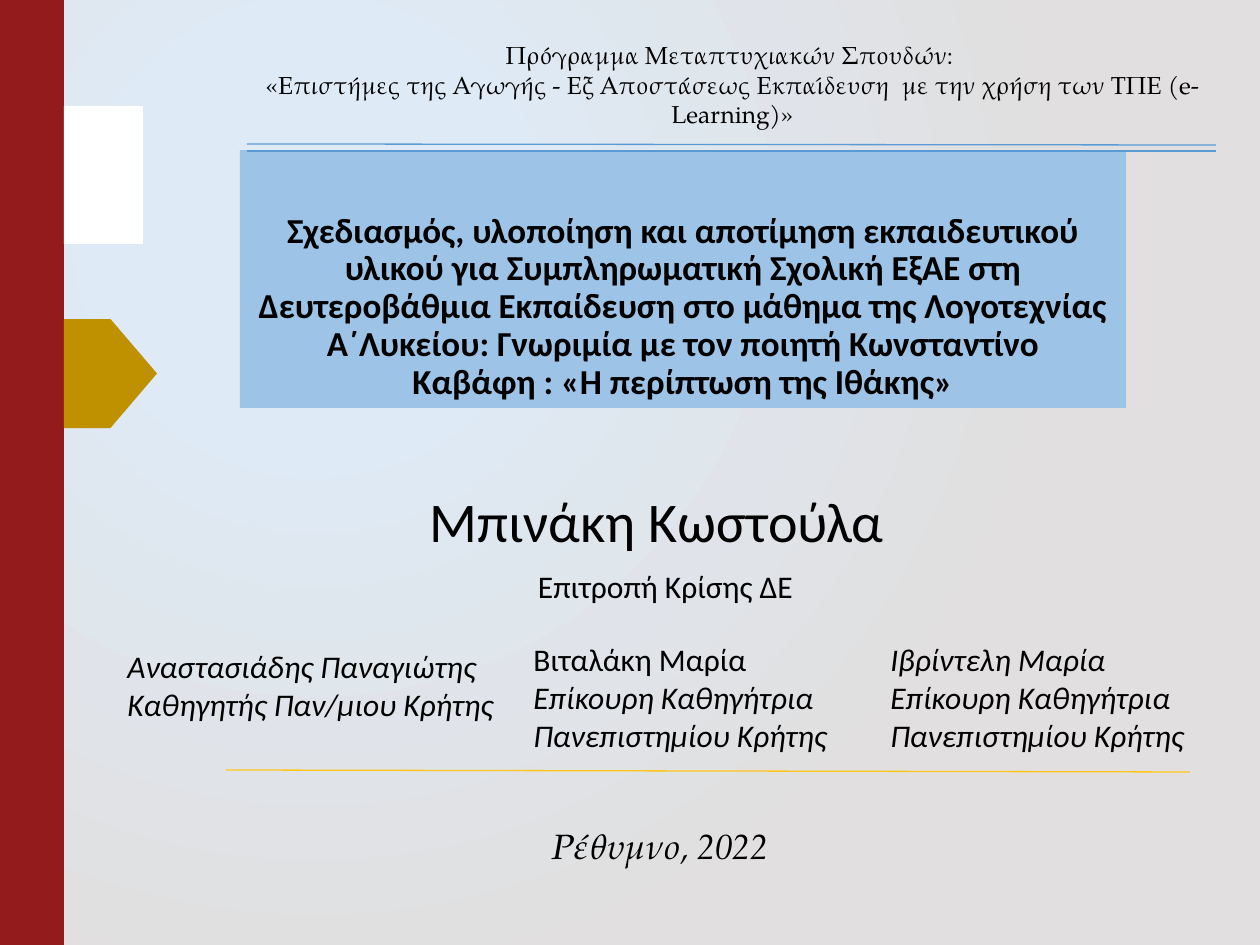
from lxml.etree import SubElement
from pptx import Presentation
from pptx.dml.color import RGBColor
from pptx.enum.shapes import MSO_CONNECTOR, MSO_SHAPE
from pptx.enum.text import MSO_ANCHOR, MSO_AUTO_SIZE, PP_ALIGN
from pptx.oxml.ns import qn
from pptx.util import Emu, Pt

PX_PER_INCH = 126
COLORS = {
    "glow": "DEEBF7", "paper": "E1DFDF", "spine": "931B1B", "tab": "FFFFFF",
    "arrow": "BF9000", "title": "9DC3E6", "header_rule": "5B9BD5",
    "footer_rule": "FFC61A", "ink": "000000",
}
SANS = "Calibri"
SERIF = "TeX Gyre Pagella"


def px(value):
    return Emu(round(value * 914400 / PX_PER_INCH))


def color(name):
    return RGBColor.from_string(COLORS[name])


def paint_background(slide):
    fill = slide.background.fill
    fill.gradient()
    for stop, name, position in zip(fill.gradient_stops, ("glow", "paper"), (0.17, 1)):
        stop.color.rgb = color(name)
        stop.position = position
    gradient = slide.element.find(".//" + qn("a:gradFill"))
    gradient.remove(gradient.find(qn("a:lin")))
    circle = SubElement(gradient, qn("a:path"), path="circle")
    SubElement(circle, qn("a:fillToRect"), l="50000", t="50000", r="100000", b="100000")


def add_block(slide, kind, box, fill):
    block = slide.shapes.add_shape(kind, *map(px, box))
    block.shadow.inherit = False
    block.fill.solid()
    block.fill.fore_color.rgb = color(fill)
    block.line.fill.background()
    return block


def add_rule(slide, start, end, name):
    rule = slide.shapes.add_connector(MSO_CONNECTOR.STRAIGHT, *map(px, start + end))
    rule.line.color.rgb = color(name)
    rule.line.width = Pt(0.75)
    SubElement(rule.element.spPr, qn("a:effectLst"))


def write(frame, lines, size, font, align=PP_ALIGN.CENTER, bold=False, spacing=None):
    frame.word_wrap = True
    for index, (words, italic) in enumerate(lines):
        paragraph = frame.paragraphs[0] if index == 0 else frame.add_paragraph()
        paragraph.alignment = align
        paragraph.line_spacing = spacing
        run = paragraph.add_run()
        run.text = words
        run.font.size = Pt(size)
        run.font.name = font
        run.font.bold = bold
        run.font.italic = italic
        run.font.color.rgb = color("ink")


def add_text(slide, box, lines, size, font, align=PP_ALIGN.CENTER, anchor=MSO_ANCHOR.TOP):
    frame = slide.shapes.add_textbox(*map(px, box)).text_frame
    write(frame, lines, size, font, align)
    frame.auto_size = MSO_AUTO_SIZE.SHAPE_TO_FIT_TEXT
    frame.vertical_anchor = anchor


def add_side_band(slide, box):
    left, top, width, height = box
    add_block(slide, MSO_SHAPE.RECTANGLE, box, "spine")
    edge = left + width
    add_block(slide, MSO_SHAPE.RECTANGLE, (edge, top + 106, 79, 138), "tab")
    add_block(slide, MSO_SHAPE.PENTAGON, (edge, top + 319, 93, 109), "arrow")


def add_title(slide, box):
    title = add_block(slide, MSO_SHAPE.RECTANGLE, box, "title").text_frame
    title.vertical_anchor = MSO_ANCHOR.BOTTOM
    thesis = (
        "Σχεδιασμός, υλοποίηση και αποτίμηση εκπαιδευτικού υλικού για "
        "Συμπληρωματική Σχολική ΕξΑΕ στη Δευτεροβάθμια Εκπαίδευση στο μάθημα "
        "της Λογοτεχνίας Α΄Λυκείου: Γνωριμία με τον ποιητή Κωνσταντίνο "
        "Καβάφη : «Η περίπτωση της Ιθάκης»"
    )
    write(title, [(thesis, False)], 20, SANS, bold=True, spacing=0.9)


def add_header(slide, box):
    left, top, width, height = box
    programme = [
        ("Πρόγραμμα Μεταπτυχιακών Σπουδών: ", False),
        ("«Επιστήμες της Αγωγής - Εξ Αποστάσεως Εκπαίδευση\u00a0 "
         "με την χρήση των ΤΠΕ (e-Learning)»", False),
    ]
    add_text(slide, (left, top, width, 72), programme, 14, SERIF)
    start, end = left + 25, left + width - 27
    bottom = top + height
    add_rule(slide, (start, bottom - 7), (end, bottom - 6), "header_rule")
    add_rule(slide, (start, bottom), (end, bottom), "header_rule")


def add_committee(slide, box):
    left, top, width, height = box
    add_text(slide, (left + 71, top, 942, 81), [("Μπινάκη Κωστούλα", False)], 32, SANS)
    add_text(slide, (left + 98, top + 81, 905, 50), [("Επιτροπή Κρίσης ΔΕ", False)], 18, SANS)
    rank = ("Επίκουρη Καθηγήτρια Πανεπιστημίου Κρήτης", True)
    members = [
        (0, 161, 407, [("Αναστασιάδης Παναγιώτης", True), ("Καθηγητής Παν/μιου Κρήτης", True)]),
        (406, 154, 338, [("Βιταλάκη Μαρία", False), rank]),
        (763, 154, 338, [("Ιβρίντελη Μαρία", True), rank]),
    ]
    for x, y, column, lines in members:
        member_box = (left + x, top + y, column, height - y)
        add_text(slide, member_box, lines, 18, SANS, PP_ALIGN.LEFT)


def add_footer(slide, box):
    left, top, width, height = box
    add_rule(slide, (left + 62, top), (left + 1026, top + 2), "footer_rule")
    add_text(slide, (left, top + 48, width, height - 48), [("Ρέθυμνο, 2022", True)],
             20, SERIF, anchor=MSO_ANCHOR.MIDDLE)


def main():
    deck = Presentation()
    deck.slide_width, deck.slide_height = px(1260), px(945)
    slide = deck.slides.add_slide(deck.slide_layouts[6])
    paint_background(slide)
    add_side_band(slide, (0, 0, 64, 945))
    add_title(slide, (240, 150, 886, 258))
    add_header(slide, (222, 34, 1021, 117))
    add_committee(slide, (115, 480, 1101, 324))
    add_footer(slide, (164, 770, 993, 103))
    deck.save("out.pptx")


if __name__ == "__main__":
    main()
